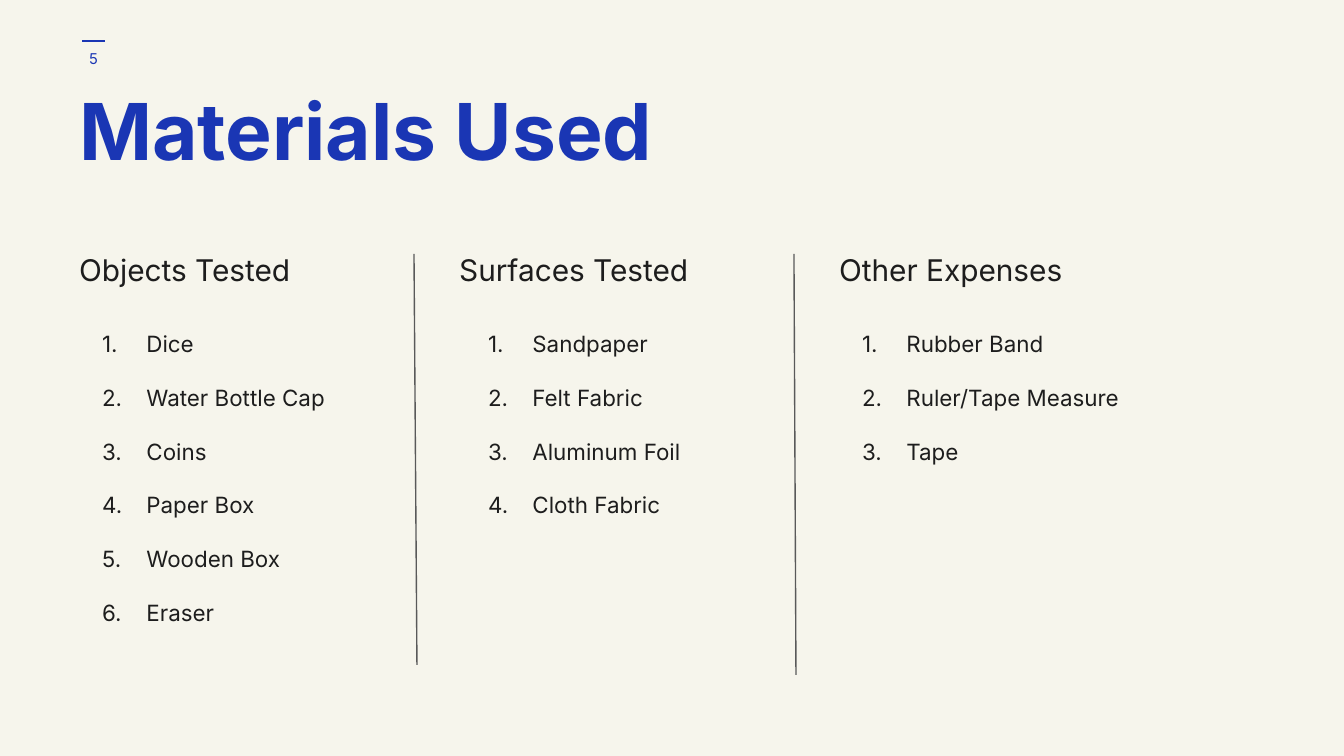
import pptx
import pptx.util
import pptx.dml.color
import pptx.enum.shapes
import pptx.enum.text
import pptx.oxml.ns
import lxml.etree

PX = 914400 / 134.4
FONT = "Inter"
COLORS = {"paper": "F6F5EC", "blue": "1A36B4", "ink": "1D1D1D", "rule": "595959"}
ALIGN = pptx.enum.text.PP_ALIGN
ANCHOR = pptx.enum.text.MSO_ANCHOR
COLUMNS = [
    ("Objects Tested", 0, 347,
     ["Dice", "Water Bottle Cap", "Coins", "Paper Box", "Wooden Box", "Eraser"]),
    ("Surfaces Tested", 6, 347,
     ["Sandpaper", "Felt Fabric", "Aluminum Foil", "Cloth Fabric"]),
    ("Other Expenses", 0, 105, ["Rubber Band", "Ruler/Tape Measure", "Tape"]),
]
DIVIDERS = [(414, 417, 665), (794, 796, 675)]


def px(n):
    """Turn pixels into EMU."""
    return pptx.util.Emu(round(n * PX))


def rgb(name):
    """Look up a named colour."""
    return pptx.dml.color.RGBColor.from_string(COLORS[name])


def number(p):
    """Make a paragraph an auto-numbered list item with a hanging indent."""
    pPr = p._p.get_or_add_pPr()
    pPr.set("marL", str(pptx.util.Inches(0.5)))
    pPr.set("indent", str(-pptx.util.Inches(0.33)))
    bullet = lxml.etree.SubElement(pPr, pptx.oxml.ns.qn("a:buAutoNum"))
    bullet.set("type", "arabicPeriod")


def write(sp, lines, size, color="ink", bold=False, align=ALIGN.LEFT,
          anchor=ANCHOR.TOP, spacing=1.0, numbered=False):
    """Fill a shape with formatted paragraphs."""
    tf = sp.text_frame
    tf.word_wrap = True
    tf.auto_size = pptx.enum.text.MSO_AUTO_SIZE.NONE
    tf.vertical_anchor = anchor
    tf.margin_left = tf.margin_right = pptx.util.Inches(0.1)
    tf.margin_top = tf.margin_bottom = pptx.util.Inches(0.1)
    for i, line in enumerate(lines):
        p = tf.add_paragraph() if i else tf.paragraphs[0]
        p.alignment = align
        p.line_spacing = spacing
        if numbered:
            number(p)
        r = p.add_run()
        r.text = line
        r.font.name = FONT
        r.font.size = pptx.util.Pt(size)
        r.font.bold = bold
        r.font.color.rgb = rgb(color)


def add_text(s, x, y, w, h, lines, size, **fmt):
    """Add a text box at a pixel box."""
    sp = s.shapes.add_textbox(px(x), px(y), px(w), px(h))
    write(sp, lines, size, **fmt)


def add_line(s, x1, y1, x2, y2, color):
    """Add a thin straight line without a shadow."""
    line = s.shapes.add_connector(
        pptx.enum.shapes.MSO_CONNECTOR.STRAIGHT, px(x1), px(y1), px(x2), px(y2))
    line.line.color.rgb = rgb(color)
    line.line.width = pptx.util.Pt(0.75)
    lxml.etree.SubElement(line._element.spPr, pptx.oxml.ns.qn("a:effectLst"))


def add_page_number(s, x, y, w, h, text):
    """Add the page number with the short rule above it."""
    add_line(s, x + 43, y + 11, x + 20, y + 11, "blue")
    add_text(s, x, y, w, h, [text], 8, color="blue", align=ALIGN.CENTER,
             anchor=ANCHOR.MIDDLE)


def add_title(s, x, y, w, h, text):
    """Place and fill the title placeholder."""
    sp = s.shapes.title
    sp.left, sp.top, sp.width, sp.height = px(x), px(y), px(w), px(h)
    write(sp, [text], 42, color="blue", bold=True, spacing=0.8)


def add_column(s, x, y, heading, shift, list_height, items):
    """Add a heading with its numbered list below."""
    add_text(s, x, y, 316, 54, [heading], 16)
    add_text(s, x + shift, y + 52, 321, list_height, items, 12, spacing=2.0,
             numbered=True)


def build_materials(prs):
    """Build the materials slide."""
    s = prs.slides.add_slide(prs.slide_layouts[5])
    s.background.fill.solid()
    s.background.fill.fore_color.rgb = rgb("paper")
    add_title(s, 66, 87, 649, 105, "Materials Used")
    for i, column in enumerate(COLUMNS):
        add_column(s, 66 + 380 * i, 238, *column)
    add_page_number(s, 62, 30, 63, 58, "5")
    for top_x, bottom_x, bottom in DIVIDERS:
        add_line(s, top_x, 254, bottom_x, bottom, "rule")


def main():
    """Create and save the presentation."""
    prs = pptx.Presentation()
    prs.slide_width, prs.slide_height = px(1344), px(756)
    build_materials(prs)
    prs.save("out.pptx")


if __name__ == "__main__":
    main()
